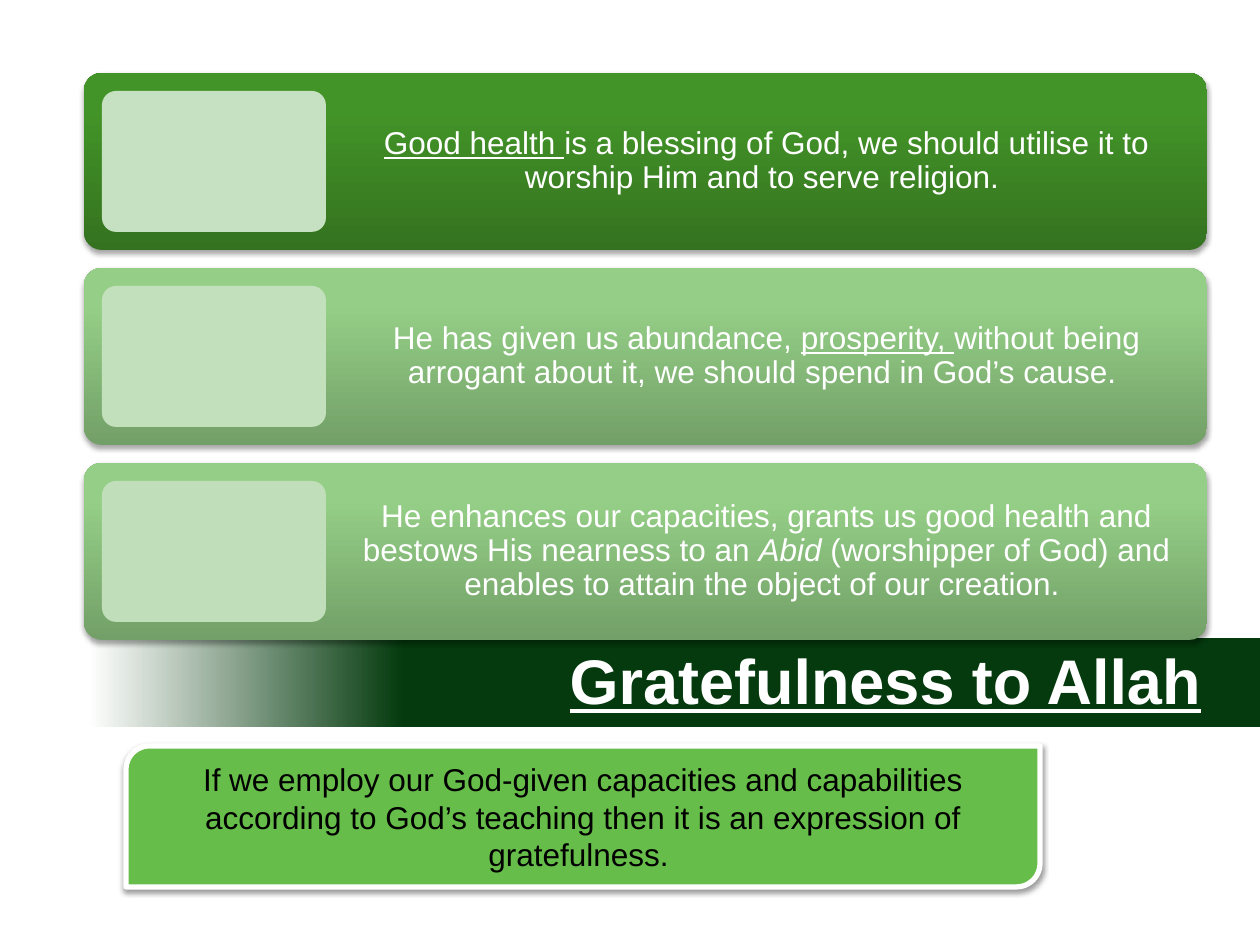
from dataclasses import dataclass

from lxml import etree
from pptx import Presentation
from pptx import util as u
from pptx.dml.color import RGBColor
from pptx.enum import shapes, text
from pptx.oxml import parse_xml
from pptx.oxml.ns import nsdecls, qn

PX = 914400 / 126  # EMU in one px
COLORS = {
    "white": "FFFFFF", "black": "000000", "band": "043A0D", "callout": "66BD49",
    "dark_low": "34721F", "dark_mid": "439428", "dark_top": "429726",
    "pale_low": "73A068", "pale_mid": "95CF87", "pale_top": "95D286",
    "tile1": "C6E1C1", "tile2": "C3E0BD", "tile3": "BFDEB9",
}
DARK = [(0, "dark_low"), (80, "dark_mid"), (100, "dark_top")]
PALE = [(0, "pale_low"), (80, "pale_mid"), (100, "pale_top")]
UP = 270  # clockwise degrees


@dataclass
class Box:
    x: int
    y: int
    w: int
    h: int

    def emu(self) -> list[u.Emu]:
        return [u.Emu(round(v * PX)) for v in (self.x, self.y, self.w, self.h)]


@dataclass
class Run:
    words: str
    underline: bool = False
    italic: bool = False
    bold: bool = False


@dataclass
class Blessing:
    stops: list[tuple[int, str]]
    tile: str
    runs: list[Run]


def rgb(name: str) -> RGBColor:
    return RGBColor.from_string(COLORS[name])


def add_shape(s, kind, box: Box, fill: str | None = None):
    sp = s.shapes.add_shape(kind, *box.emu())
    sp.shadow.inherit = False
    sp.line.fill.background()
    if fill:
        sp.fill.solid()
        sp.fill.fore_color.rgb = rgb(fill)
    return sp


def set_gradient(sp, stops: list[tuple[int, str]], angle: int) -> None:
    sp.fill.background()
    stop_xml = "".join(
        f'<a:gs pos="{pos * 1000}"><a:srgbClr val="{COLORS[name]}"/></a:gs>'
        for pos, name in stops)
    grad = parse_xml(
        f'<a:gradFill {nsdecls("a")} rotWithShape="1"><a:gsLst>{stop_xml}</a:gsLst>'
        f'<a:lin ang="{angle * 60000}" scaled="0"/></a:gradFill>')
    pr = sp.element.spPr
    pr.replace(pr.find(qn("a:noFill")), grad)


def set_shadow(sp, alpha: int, dist: float) -> None:
    effects = sp.element.spPr.find(qn("a:effectLst"))
    shadow = etree.SubElement(
        effects, qn("a:outerShdw"), blurRad=str(u.Pt(3.1)), dist=str(u.Pt(dist)),
        dir="5400000", rotWithShape="0")
    color = etree.SubElement(shadow, qn("a:srgbClr"), val=COLORS["black"])
    etree.SubElement(color, qn("a:alpha"), val=str(alpha * 1000))


def write(sp, runs: list[Run], size: int, color: str, frame: dict, para: dict) -> None:
    tf = sp.text_frame
    p = tf.paragraphs[0]
    frame = {"word_wrap": True, "vertical_anchor": text.MSO_ANCHOR.MIDDLE, **frame}
    for target, values in ((tf, frame), (p, para)):
        for name, value in values.items():
            setattr(target, name, value)
    for run in runs:
        r = p.add_run()
        r.text = run.words
        font = {"name": "Arial", "size": u.Pt(size), "bold": run.bold,
                "italic": run.italic, "underline": run.underline}
        for name, value in font.items():
            setattr(r.font, name, value)
        r.font.color.rgb = rgb(color)


def add_blessing(s, top: int, item: Blessing) -> None:
    rounded = shapes.MSO_SHAPE.ROUNDED_RECTANGLE
    card = add_shape(s, rounded, Box(84, top, 1123, 177))
    set_gradient(card, item.stops, UP)
    set_shadow(card, 35, 1.8)
    label = s.shapes.add_textbox(*Box(326, top, 881, 177).emu())
    sides = ("left", "right", "top", "bottom")
    write(label, item.runs, 18, "white",
          {f"margin_{side}": u.Inches(0.07) for side in sides},
          {"alignment": text.PP_ALIGN.CENTER, "line_spacing": 0.9})
    tile = add_shape(s, rounded, Box(102, top + 18, 224, 141), item.tile)
    for sp in (card, tile):
        sp.adjustments[0] = 0.1


BLESSINGS = [
    Blessing(DARK, "tile1", [
        Run("Good health ", underline=True),
        Run("is a blessing of God, we should utilise it to worship Him "
            "and to serve religion. ")]),
    Blessing(PALE, "tile2", [
        Run("He has given us abundance, "),
        Run("prosperity, ", underline=True),
        Run("without being arrogant about it, we should spend in God’s cause. ")]),
    Blessing(PALE, "tile3", [
        Run("He enhances our capacities, grants us good health and bestows "
            "His nearness to an "),
        Run("Abid", italic=True),
        Run(" (worshipper of God) and enables to attain the object of our creation. ")]),
]


def main() -> None:
    prs = Presentation()
    prs.slide_width, prs.slide_height = u.Inches(10), u.Inches(7.5)
    s = prs.slides.add_slide(prs.slide_layouts[6])

    # Title band
    band = add_shape(s, shapes.MSO_SHAPE.RECTANGLE, Box(0, 638, 1260, 89))
    set_gradient(band, [(7, "white"), (32, "band")], 0)
    title = s.shapes.add_textbox(*Box(329, 640, 872, 78).emu())
    write(title, [Run("Gratefulness to Allah", underline=True, bold=True)], 36, "white",
          {"margin_left": 0, "margin_right": 0},
          {"alignment": text.PP_ALIGN.RIGHT, "space_before": u.Pt(10.8)})

    # Blessing cards
    for i, item in enumerate(BLESSINGS):
        add_blessing(s, 73 + 195 * i, item)

    # Closing callout
    callout = add_shape(s, shapes.MSO_SHAPE.ROUND_2_DIAG_RECTANGLE,
                        Box(126, 746, 914, 141), "callout")
    callout.line.color.rgb = rgb("white")
    callout.line.width = u.Pt(3)
    set_shadow(callout, 38, 1.6)
    write(callout, [Run("If we employ our God-given capacities and capabilities according "
                        "to God’s teaching then it is an expression of gratefulness. ")],
          18, "black", {}, {"alignment": text.PP_ALIGN.CENTER})

    prs.save("out.pptx")


if __name__ == "__main__":
    main()
